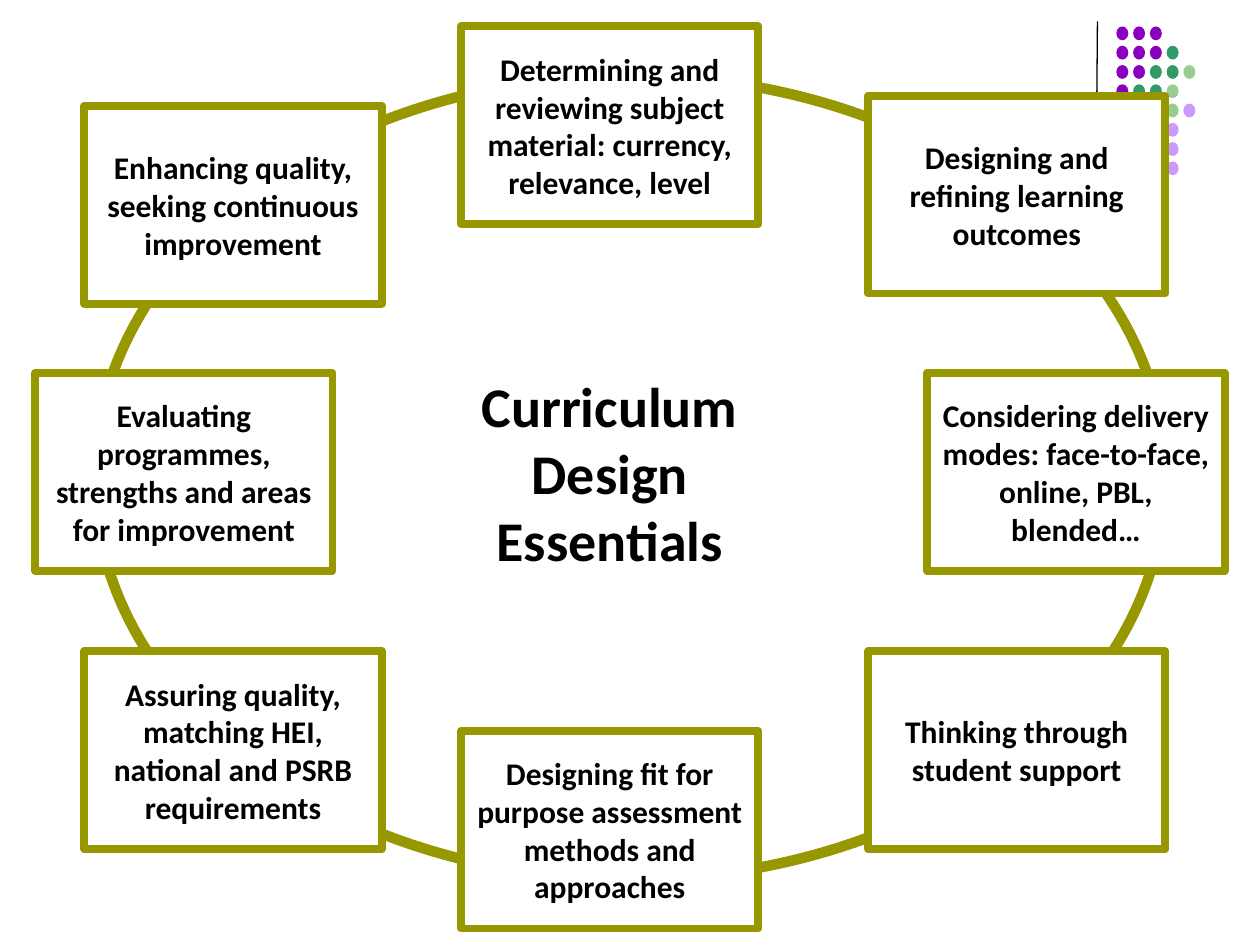
from pptx import Presentation
from pptx.dml.color import RGBColor
from pptx.enum.shapes import MSO_CONNECTOR, MSO_SHAPE
from pptx.enum.text import MSO_ANCHOR, MSO_AUTO_SIZE, PP_ALIGN
from pptx.oxml.ns import qn
from pptx.util import Inches, Pt
from lxml import etree

RECT, OVAL = MSO_SHAPE.RECTANGLE, MSO_SHAPE.OVAL
STRAIGHT = MSO_CONNECTOR.STRAIGHT
CENTER, MIDDLE = PP_ALIGN.CENTER, MSO_ANCHOR.MIDDLE
NO_FIT = MSO_AUTO_SIZE.NONE

BLACK = RGBColor(0x00, 0x00, 0x00)
WHITE = RGBColor(0xFF, 0xFF, 0xFF)
OLIVE = RGBColor(0x97, 0x97, 0x00)
PURPLE = RGBColor(0x8A, 0x00, 0xC0)
GREEN = RGBColor(0x33, 0x99, 0x66)
LIGHT_GREEN = RGBColor(0x99, 0xCC, 0x91)
LILAC = RGBColor(0xCC, 0x99, 0xFF)


def paint(sp, fill, line, width):
    sp.fill.solid()
    sp.fill.fore_color.rgb = fill
    sp.line.color.rgb = line
    sp.line.width = Pt(width)


def write(sp, lines, size):
    tf = sp.text_frame
    tf.word_wrap = True
    tf.auto_size = NO_FIT
    tf.vertical_anchor = MIDDLE
    for i, line in enumerate(lines):
        p = tf.paragraphs[0] if i == 0 else tf.add_paragraph()
        p.alignment = CENTER
        r = p.add_run()
        r.text = line
        r.font.name = "Calibri"
        r.font.size = Pt(size)
        r.font.bold = True
        r.font.color.rgb = BLACK


prs = Presentation()
prs.slide_width, prs.slide_height = Inches(10), Inches(7.5)
slide = prs.slides.add_slide(prs.slide_layouts[5])
shapes = slide.shapes

# Corner decoration: a thin rule and a grid of dots
rule = shapes.add_connector(STRAIGHT, Inches(8.71), Inches(0.17), Inches(8.7), Inches(1.47))
rule.line.color.rgb = BLACK
rule.line.width = Pt(0.75)
etree.SubElement(rule.element.spPr, qn("a:effectLst"))

DOT_COLORS = {"P": PURPLE, "G": GREEN, "L": LIGHT_GREEN, "V": LILAC}
DOT_ROWS = ["PPP", "PPPG", "PPGGL", "PGGL", "   LV", "   V", "   V", "   V"]
DOT_LEFT, DOT_TOP, DOT_DX, DOT_DY = 8.86, 0.21, 0.133, 0.153
for row, pattern in enumerate(DOT_ROWS):
    for col, key in enumerate(pattern):
        if key == " ":
            continue
        dot = shapes.add_shape(OVAL, Inches(DOT_LEFT + col * DOT_DX), Inches(DOT_TOP + row * DOT_DY),
                               Inches(0.095), Inches(0.11))
        dot.fill.solid()
        dot.fill.fore_color.rgb = DOT_COLORS[key]
        dot.line.fill.background()
        dot.shadow.inherit = False

# Ring behind the boxes
ring = shapes.add_shape(OVAL, Inches(0.75), Inches(0.6), Inches(8.5), Inches(6.38))
paint(ring, WHITE, OLIVE, 6)
ring.shadow.inherit = False

# Boxes around the ring
BOX_W, BOX_H = Inches(2.36), Inches(1.57)
FAR_LEFT, LEFT, MID, RIGHT, FAR_RIGHT = 0.28, 0.67, 3.66, 6.89, 7.36
TOP, CENTRE, LOWER, BOTTOM = 0.21, 2.96, 5.17, 5.8
BOXES = [
    (FAR_LEFT, CENTRE, "Evaluating programmes, strengths and areas for improvement"),
    (FAR_RIGHT, CENTRE, "Considering delivery modes: face-to-face, online, PBL, blended…"),
    (MID, TOP, "Determining and reviewing subject material: currency, relevance, level"),
    (MID, BOTTOM, "Designing fit for purpose assessment methods and approaches"),
    (LEFT, 0.84, "Enhancing quality, seeking continuous improvement"),
    (RIGHT, 0.76, "Designing and refining learning outcomes"),
    (LEFT, LOWER, "Assuring quality, matching HEI, national and PSRB requirements"),
    (RIGHT, LOWER, "Thinking through student support"),
]
for x, y, text in BOXES:
    box = shapes.add_shape(RECT, Inches(x), Inches(y), BOX_W, BOX_H)
    paint(box, WHITE, OLIVE, 4.5)
    box.shadow.inherit = False
    write(box, [text], 18)

# Title in the middle, brought in front of the ring
title = shapes.title
title.left, title.top, title.width, title.height = Inches(MID), Inches(CENTRE), BOX_W, BOX_H
paint(title, WHITE, WHITE, 4.5)
write(title, ["Curriculum", "Design", "Essentials"], 32)
title.element.getparent().append(title.element)

prs.save("out.pptx")
